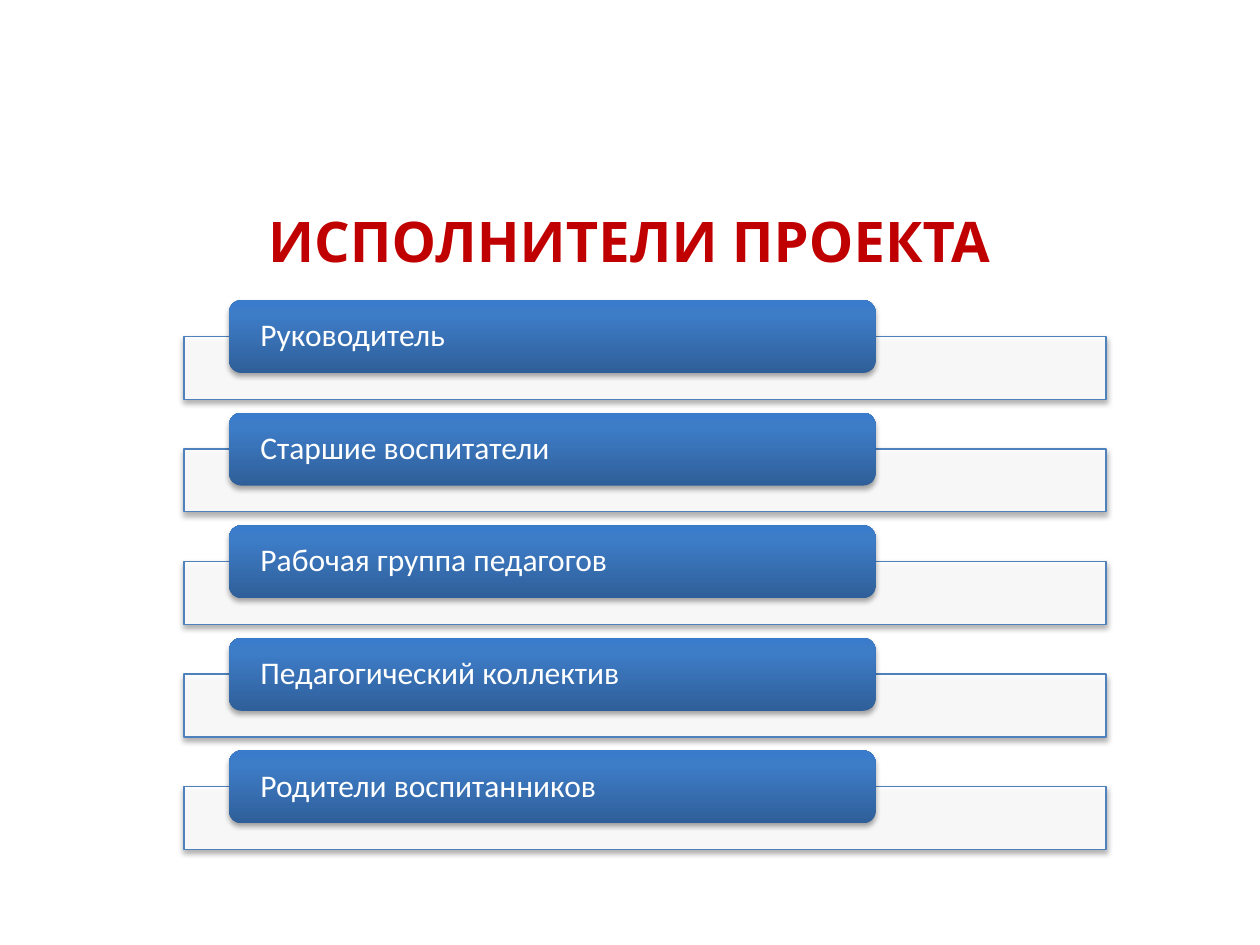
from lxml.etree import SubElement
from pptx import Presentation
from pptx.dml.color import RGBColor
from pptx.enum.shapes import MSO_SHAPE
from pptx.enum.text import MSO_ANCHOR, PP_ALIGN
from pptx.oxml.ns import qn
from pptx.util import Cm, Pt

COLORS = {
    "title": "C00000",
    "bar": "FFFFFF",
    "outline": "4F81BD",
    "label": "FFFFFF",
    "shadow": "000000",
    "tab_low": "2F5F99",
    "tab_mid": "3D7CC7",
    "tab_high": "3A7CCB",
}
TAB_STOPS = [(0, "tab_low"), (80, "tab_mid"), (100, "tab_high")]
PERFORMERS = [
    "Руководитель",
    "Старшие воспитатели",
    "Рабочая группа педагогов",
    "Педагогический коллектив",
    "Родители воспитанников",
]
FIRST_TAB_TOP = 6.05
ROW_PITCH = 2.27
BAR_OFFSET = 0.73


def rgb(name):
    return RGBColor.from_string(COLORS[name])


def add_color(parent, name, alpha=None):
    """Append an srgbClr element, with opacity in percent if given."""
    clr = SubElement(parent, qn("a:srgbClr"), val=COLORS[name])
    if alpha is not None:
        SubElement(clr, qn("a:alpha"), val=str(alpha * 1000))


class SlideBuilder:
    title_font = "Karla"
    label_font = "Calibri"

    def __init__(self, slide):
        self.slide = slide

    def _write(self, tf, text, font, size, color, bold=False):
        tf.word_wrap = True
        p = tf.paragraphs[0]
        p.line_spacing = 0.9
        r = p.add_run()
        r.text = text
        r.font.name = font
        r.font.size = Pt(size)
        r.font.bold = bold
        r.font.color.rgb = rgb(color)
        return p

    def _shape(self, kind, left, top, width, height):
        """Add a preset shape with the soft shadow below it."""
        sp = self.slide.shapes.add_shape(
            kind, Cm(left), Cm(top), Cm(width), Cm(height))
        sp.shadow.inherit = False
        effects = sp._element.spPr.find(qn("a:effectLst"))
        shadow = SubElement(
            effects, qn("a:outerShdw"), blurRad=str(Pt(3.1)),
            dist=str(Pt(1.8)), dir="5400000", rotWithShape="0")
        add_color(shadow, "shadow", 35)
        return sp

    def title(self, text, left, top, width, height):
        sp = self.slide.shapes.add_textbox(
            Cm(left), Cm(top), Cm(width), Cm(height))
        tf = sp.text_frame
        tf.margin_left = tf.margin_right = tf.margin_top = tf.margin_bottom = 0
        p = self._write(tf, text, self.title_font, 32, "title", bold=True)
        p.alignment = PP_ALIGN.CENTER

    def bar(self, left, top, width, height):
        sp = self._shape(MSO_SHAPE.RECTANGLE, left, top, width, height)
        sp.fill.solid()
        sp.fill.fore_color.rgb = rgb("bar")
        clr = sp._element.spPr.find(qn("a:solidFill")).find(qn("a:srgbClr"))
        SubElement(clr, qn("a:alpha"), val="90000")
        sp.line.color.rgb = rgb("outline")
        sp.line.width = Pt(0.75)

    def tab(self, text, left, top, width, height):
        sp = self._shape(MSO_SHAPE.ROUNDED_RECTANGLE, left, top, width, height)
        sp.line.fill.background()
        sp.fill.gradient()
        sp.fill.gradient_angle = 90
        stops = sp._element.spPr.find(qn("a:gradFill")).find(qn("a:gsLst"))
        for old in list(stops):
            stops.remove(old)
        for percent, name in TAB_STOPS:
            add_color(SubElement(stops, qn("a:gs"), pos=str(percent * 1000)), name)
        tf = sp.text_frame
        tf.margin_left = tf.margin_right = Cm(0.56)
        tf.margin_top = tf.margin_bottom = 0
        tf.vertical_anchor = MSO_ANCHOR.MIDDLE
        p = self._write(tf, text, self.label_font, 18, "label")
        p.alignment = PP_ALIGN.LEFT


def main():
    prs = Presentation()
    prs.slide_width, prs.slide_height = Cm(25.4), Cm(19.05)
    s = SlideBuilder(prs.slides.add_slide(prs.slide_layouts[6]))
    s.title("ИСПОЛНИТЕЛИ ПРОЕКТА", 2.46, 4.32, 20.45, 2.21)
    for i, performer in enumerate(PERFORMERS):
        top = FIRST_TAB_TOP + i * ROW_PITCH
        s.bar(3.71, top + BAR_OFFSET, 18.59, 1.27)
        s.tab(performer, 4.62, top, 13.03, 1.47)
    prs.save("out.pptx")


if __name__ == "__main__":
    main()
